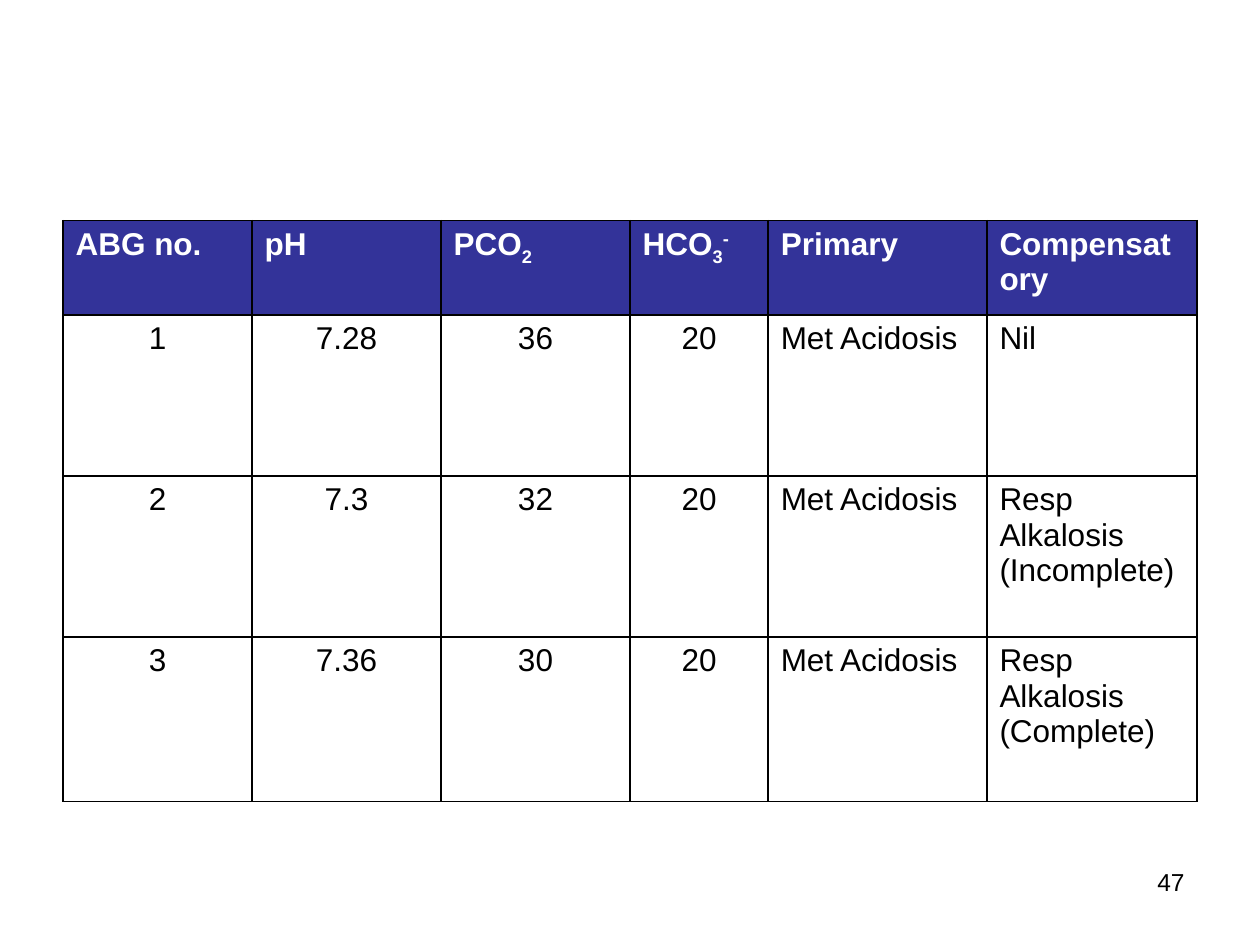
from lxml.etree import SubElement
from pptx import Presentation
from pptx.dml.color import RGBColor
from pptx.enum.text import PP_ALIGN as Align
from pptx.oxml.ns import qn
from pptx.util import Pt

INDIGO = RGBColor(0x33, 0x33, 0x99)
WHITE = RGBColor(0xFF, 0xFF, 0xFF)
BLACK = RGBColor(0, 0, 0)


def add_run(paragraph, text, size, color, bold=False, baseline=0):
    run = paragraph.add_run()
    run.text = text
    run.font.name = "Arial"
    run.font.size = Pt(size)
    run.font.bold = bold
    run.font.color.rgb = color
    if baseline:
        run.font._element.set("baseline", str(baseline * 1000))


def set_borders(cell):
    properties = cell._tc.get_or_add_tcPr()
    for position, side in enumerate(("lnL", "lnR", "lnT", "lnB")):
        line = SubElement(properties, qn(f"a:{side}"), w=str(Pt(1)))
        fill = SubElement(line, qn("a:solidFill"))
        SubElement(fill, qn("a:srgbClr"), val=str(BLACK))
        properties.insert(position, line)  # borders precede the fill


deck = Presentation()
deck.slide_width, deck.slide_height = Pt(720), Pt(540)
slide = deck.slides.add_slide(deck.slide_layouts[6])

# Blood gas results: each header is a list of (text, baseline percent)
headers = [
    [("ABG no.", 0)],
    [("pH", 0)],
    [("PCO", 0), ("2", -25)],
    [("HCO", 0), ("3", -25), ("-", 30)],
    [("Primary", 0)],
    [("Compensatory", 0)],
]
results = [
    ["1", "7.28", "36", "20", "Met Acidosis", "Nil"],
    ["2", "7.3", "32", "20", "Met Acidosis", "Resp Alkalosis\n(Incomplete)"],
    ["3", "7.36", "30", "20", "Met Acidosis", "Resp Alkalosis\n(Complete)"],
]
column_widths = [108, 108, 108, 79, 125, 120]
row_heights = [54, 92, 92, 94]
NUMERIC_COLUMNS = 4

# Table grid
abg_table = slide.shapes.add_table(
    len(row_heights), len(column_widths), Pt(36), Pt(126),
    Pt(sum(column_widths)), Pt(sum(row_heights))).table
for column, width in zip(abg_table.columns, column_widths):
    column.width = Pt(width)
for row, height in zip(abg_table.rows, row_heights):
    row.height = Pt(height)
for cell in abg_table.iter_cells():
    cell.fill.solid()
    cell.fill.fore_color.rgb = WHITE
    set_borders(cell)

# Header row
for column, pieces in enumerate(headers):
    cell = abg_table.cell(0, column)
    cell.fill.fore_color.rgb = INDIGO
    for text, baseline in pieces:
        add_run(cell.text_frame.paragraphs[0], text, 18, WHITE, True, baseline)

# Result rows
for row, values in enumerate(results, start=1):
    for column, value in enumerate(values):
        frame = abg_table.cell(row, column).text_frame
        for index, text in enumerate(value.split("\n")):
            paragraph = frame.add_paragraph() if index else frame.paragraphs[0]
            if column < NUMERIC_COLUMNS:
                paragraph.alignment = Align.CENTER
            add_run(paragraph, text, 18, BLACK)

# Page number
page_number = slide.shapes.add_textbox(Pt(516), Pt(492), Pt(168), Pt(37.5)).text_frame
page_number.word_wrap = True
page_number.paragraphs[0].alignment = Align.RIGHT
add_run(page_number.paragraphs[0], "47", 14, BLACK)

deck.save("out.pptx")
